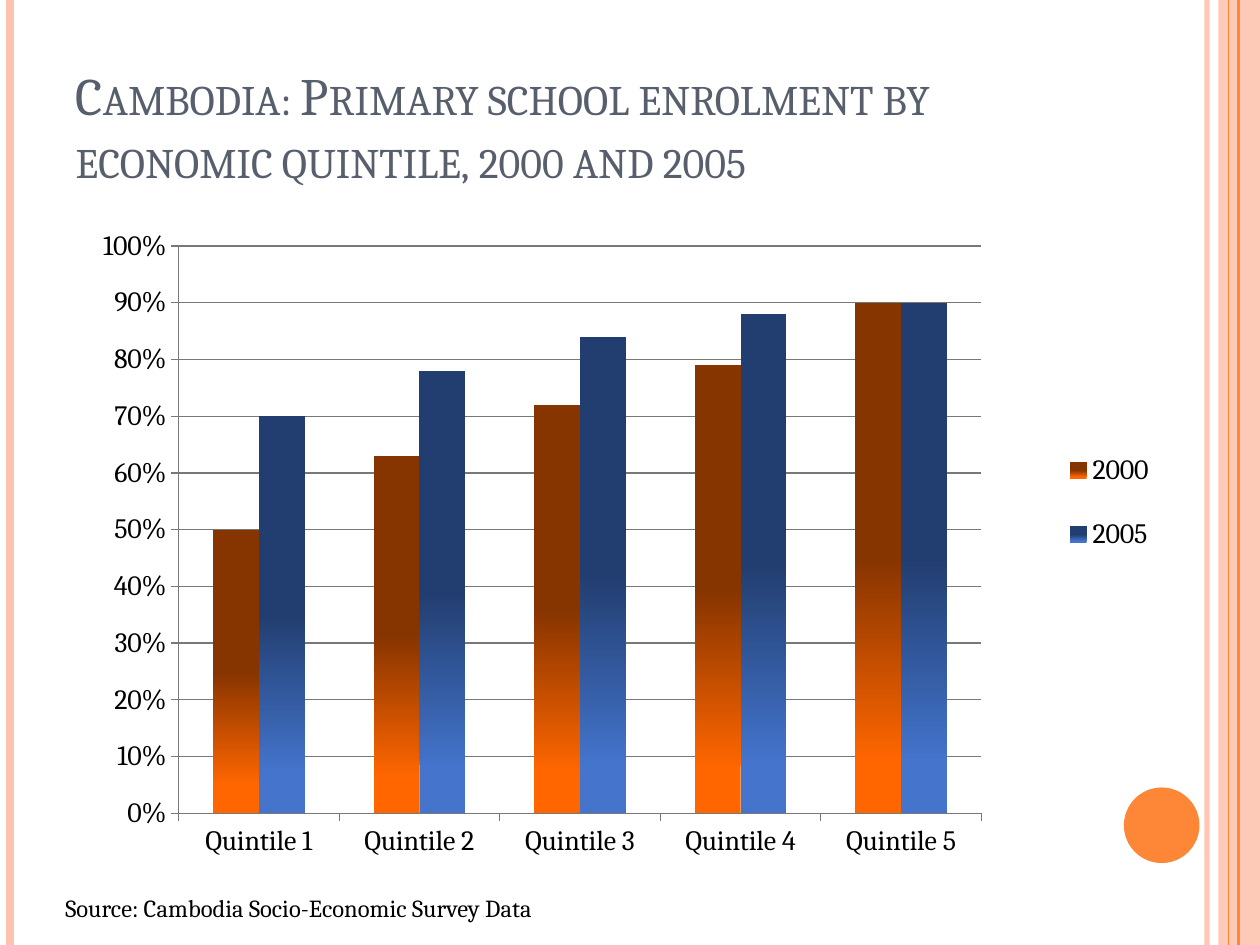
import pptx
import pptx.chart.data
import pptx.dml.color
import pptx.enum.chart
import pptx.enum.shapes
import pptx.enum.text
import pptx.oxml
import pptx.oxml.ns
import pptx.util

Inches = pptx.util.Inches
Pt = pptx.util.Pt
RGBColor = pptx.dml.color.RGBColor
qn = pptx.oxml.ns.qn

WHITE = RGBColor(0xFF, 0xFF, 0xFF)
BLACK = RGBColor(0, 0, 0)
SLATE = RGBColor(0x57, 0x5F, 0x6D)
ORANGE = RGBColor(0xFE, 0x86, 0x37)
PEACH = RGBColor(0xFE, 0xC3, 0xAE)
GRID_GREY = RGBColor(0x78, 0x78, 0x78)
BAR_GRADIENTS = [
    (RGBColor(0xFF, 0x66, 0x00), RGBColor(0x86, 0x34, 0x00)),
    (RGBColor(0x44, 0x74, 0xCC), RGBColor(0x22, 0x3E, 0x70)),
]
FONT = "Cambria"

# x in inches, colour, width in points, opacity in percent
STRIPES = [
    (9.58, PEACH, 3, 93),
    (0.08, PEACH, 4.5, 100),
    (9.83, ORANGE, 1.5, 100),
    (9.75, ORANGE, 0.75, 100),
]
CATEGORIES = [f"Quintile {number}" for number in range(1, 6)]
ENROLMENT = {
    "2000": (0.5, 0.63, 0.72, 0.79, 0.9),
    "2005": (0.7, 0.78, 0.84, 0.88, 0.9),
}


def set_values(target, values):
    for name, value in values.items():
        setattr(target, name, value)


def format_font(font, size, color):
    set_values(font, {"name": FONT, "size": Pt(size)})
    font.color.rgb = color


def set_opacity(element, percent):
    """Give the first plain colour inside the element an opacity."""
    if percent < 100:
        color = next(element.iter(qn("a:srgbClr")))
        alpha = color.makeelement(qn("a:alpha"), {"val": str(percent * 1000)})
        color.append(alpha)


def add_stripe(slide, x, color, width, opacity):
    stripe = slide.shapes.add_connector(
        pptx.enum.shapes.MSO_CONNECTOR.STRAIGHT,
        Inches(x), Inches(0), Inches(x), Inches(7.5))
    stripe.line.color.rgb = color
    stripe.line.width = Pt(width)
    properties = stripe._element.spPr
    set_opacity(properties, opacity)
    properties.append(properties.makeelement(qn("a:effectLst"), {}))


def add_plain_shape(slide, kind, bounds, color, opacity=100):
    shape = slide.shapes.add_shape(kind, *map(Inches, bounds))
    shape.shadow.inherit = False
    shape.fill.solid()
    shape.fill.fore_color.rgb = color
    shape.line.fill.background()
    set_opacity(shape._element.spPr, opacity)


def write_text(box, text, size, color):
    para = box.text_frame.paragraphs[0]
    para.alignment = pptx.enum.text.PP_ALIGN.LEFT
    span = para.add_run()
    span.text = text
    format_font(span.font, size, color)
    return span


def add_title(slide, text):
    title = slide.shapes.title
    set_values(title, {"left": Inches(0.5), "top": Inches(0.3),
                       "width": Inches(8.17), "height": Inches(1.25)})
    set_values(title.text_frame, {
        "word_wrap": True,
        "auto_size": pptx.enum.text.MSO_AUTO_SIZE.NONE,
        "vertical_anchor": pptx.enum.text.MSO_ANCHOR.BOTTOM})
    span = write_text(title, text, 30, SLATE)
    span.font._element.set("cap", "small")


def add_source_note(slide, text):
    box = slide.shapes.add_textbox(
        Inches(0.42), Inches(7.04), Inches(8.25), Inches(0.34))
    set_values(box.text_frame, {
        "word_wrap": True,
        "auto_size": pptx.enum.text.MSO_AUTO_SIZE.SHAPE_TO_FIT_TEXT})
    write_text(box, text, 14, BLACK)


def set_layout(parent, index, fractions, inner=False):
    """Place a chart part by x, y, w and h as fractions of the chart."""
    for old in parent.findall(qn("c:layout")):
        parent.remove(old)
    values = [("layoutTarget", "inner")] if inner else []
    values += [("xMode", "edge"), ("yMode", "edge"), *zip("xywh", fractions)]
    parts = "".join(f'<c:{tag} val="{value}"/>' for tag, value in values)
    layout = pptx.oxml.parse_xml(
        f'<c:layout {pptx.oxml.ns.nsdecls("c")}>'
        f"<c:manualLayout>{parts}</c:manualLayout></c:layout>")
    parent.insert(index, layout)


def format_axes(chart):
    for axis in (chart.category_axis, chart.value_axis):
        axis.format.line.color.rgb = GRID_GREY
        axis.major_tick_mark = pptx.enum.chart.XL_TICK_MARK.OUTSIDE
    values = chart.value_axis
    set_values(values, {"minimum_scale": 0, "maximum_scale": 1,
                        "major_unit": 0.1, "has_major_gridlines": True})
    set_values(values.tick_labels, {"number_format": "0%",
                                    "number_format_is_linked": False})
    values.major_gridlines.format.line.color.rgb = GRID_GREY


def fill_bars(series, bottom_color, top_color):
    fill = series.format.fill
    fill.gradient()
    fill.gradient_angle = 90
    for stop, color, position in zip(
            fill.gradient_stops, (bottom_color, top_color), (0.1, 0.5)):
        stop.color.rgb = color
        stop.position = position


def add_enrolment_chart(slide):
    data = pptx.chart.data.CategoryChartData(number_format="0%")
    data.categories = CATEGORIES
    for year, shares in ENROLMENT.items():
        data.add_series(year, shares)
    chart = slide.shapes.add_chart(
        pptx.enum.chart.XL_CHART_TYPE.COLUMN_CLUSTERED,
        Inches(0.5), Inches(1.75), Inches(8.74), Inches(5.33), data).chart
    set_values(chart, {"has_title": False, "has_legend": True})
    format_font(chart.font, 16, BLACK)
    format_axes(chart)

    plot = chart.plots[0]
    set_values(plot, {"gap_width": 150, "overlap": 0,
                      "vary_by_categories": False})
    for series, gradient in zip(plot.series, BAR_GRADIENTS):
        fill_bars(series, *gradient)

    set_values(chart.legend, {
        "position": pptx.enum.chart.XL_LEGEND_POSITION.RIGHT,
        "include_in_layout": False})
    set_layout(chart.legend._element, 1, (0.9, 0.3, 0.1, 0.24))
    plot_area = chart._chartSpace.chart.plotArea
    set_layout(plot_area, 0, (0.105, 0.038, 0.729, 0.845), inner=True)


def main():
    deck = pptx.Presentation()
    set_values(deck, {"slide_width": Inches(10), "slide_height": Inches(7.5)})
    slide = deck.slides.add_slide(deck.slide_layouts[5])
    slide.background.fill.solid()
    slide.background.fill.fore_color.rgb = WHITE

    shape_kinds = pptx.enum.shapes.MSO_SHAPE
    add_plain_shape(slide, shape_kinds.RECTANGLE, (9.67, 0, 0.33, 7.5), PEACH, 87)
    for stripe in STRIPES:
        add_stripe(slide, *stripe)
    add_plain_shape(slide, shape_kinds.OVAL, (8.92, 6.25, 0.6, 0.6), ORANGE)
    add_title(slide, "Cambodia: Primary school enrolment by economic quintile, "
                     "2000 and 2005")
    add_enrolment_chart(slide)
    add_source_note(slide, "Source: Cambodia Socio-Economic Survey Data")
    deck.save("out.pptx")


if __name__ == "__main__":
    main()
